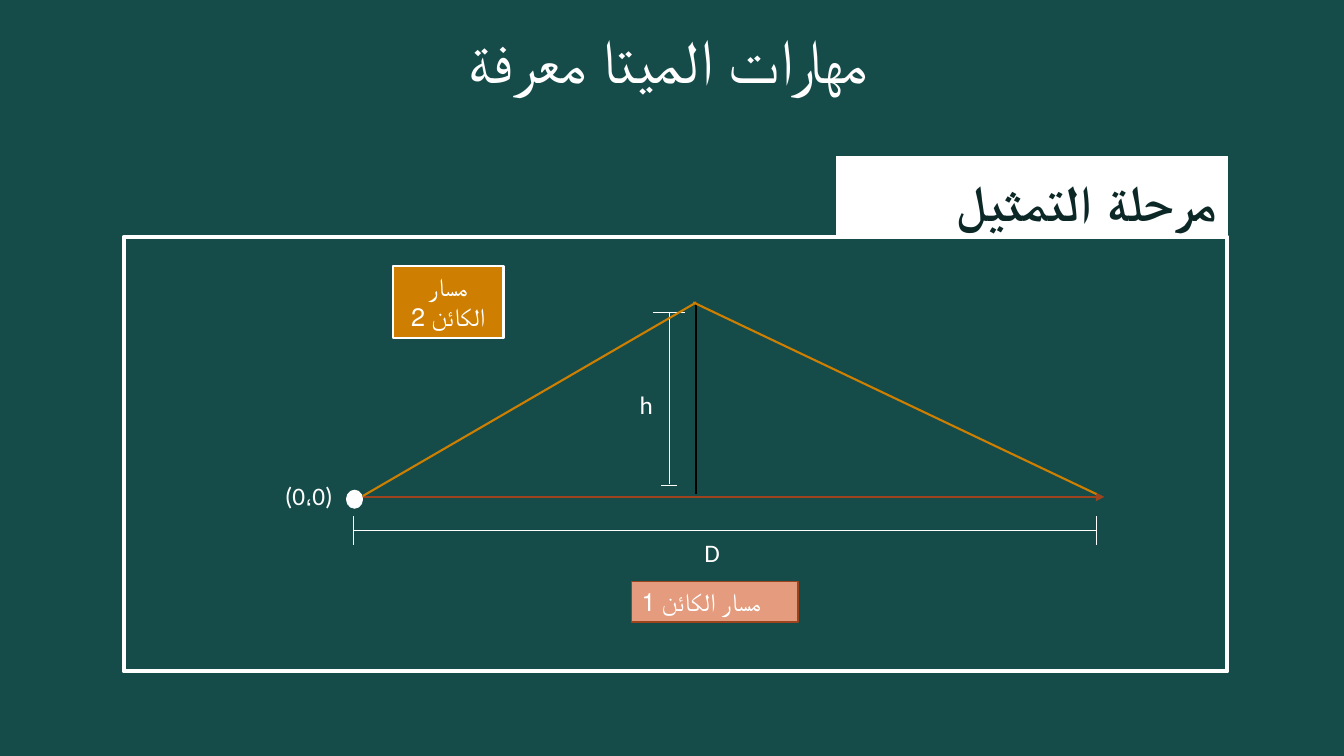
from pptx import Presentation
from pptx.dml.color import RGBColor
from pptx.enum.shapes import MSO_CONNECTOR as Link, MSO_SHAPE as Form
from pptx.enum.text import MSO_ANCHOR as Anchor, MSO_AUTO_SIZE as Fit, PP_ALIGN as Align
from pptx.util import Cm, Pt
from lxml import etree

NS = "http://schemas.openxmlformats.org/drawingml/2006/main"
BACK, DARK, WHITE, BLACK = "154C4A", "0B2827", "FFFFFF", "000000"
GOLD, RUST, PEACH = "CE7F01", "9D441F", "E59B7D"
PLAIN = {"name": "Calibri", "size": Pt(18), "bold": False}


def hue(code):
    return RGBColor.from_string(code)


def paint(fill, code):
    fill.solid()
    fill.fore_color.rgb = hue(code)


def write(shape, text, align=Align.LEFT, color=WHITE, frame=None, rtl=False, **font):
    """Put one formatted paragraph in the shape."""
    body = shape.text_frame
    for key, value in {"word_wrap": True, "vertical_anchor": Anchor.TOP, **(frame or {})}.items():
        setattr(body, key, value)
    para = body.paragraphs[0]
    para.alignment = align
    if rtl:
        para._p.get_or_add_pPr().set("rtl", "1")
    run = para.add_run()
    run.text = text
    for key, value in {**PLAIN, **font}.items():
        setattr(run.font, key, value)
    run.font.color.rgb = hue(color)
    return para


def block(slide, box, fill=None, edge=WHITE, width=0.5, form=Form.RECTANGLE):
    shape = slide.shapes.add_shape(form, *map(Cm, box))
    shape.shadow.inherit = False
    if fill:
        paint(shape.fill, fill)
    else:
        shape.fill.background()
    shape.line.color.rgb = hue(edge)
    shape.line.width = Pt(width)
    return shape


def title(slide, box):
    holder = slide.shapes.title
    for key, value in zip(("left", "top", "width", "height"), box):
        setattr(holder, key, Cm(value))
    sides = ("left", "top", "right", "bottom")
    frame = {f"margin_{side}": 0 for side in sides} | {"auto_size": Fit.NONE}
    para = write(holder, "مهارات الميتا معرفة", Align.CENTER, frame=frame, rtl=True, size=Pt(44))
    para.line_spacing = 0.88


def panel(slide, box):
    """Draw the frame with its heading tab on the top right corner."""
    left, top, width, _ = box
    wide, high = 9.86, 2.03
    tab = block(slide, (left + width - wide, top - high, wide, high), WHITE, width=0.75)
    para = write(tab, "مرحلة التمثيل", Align.RIGHT, DARK, {"vertical_anchor": Anchor.BOTTOM},
                 rtl=True, size=Pt(36), bold=True)
    para.runs[0]._r.get_or_add_rPr().set("spc", "50")
    block(slide, box, width=3)


def paths(slide, box):
    """Draw both object paths with their dimensions and labels."""
    left, top = box[:2]
    start, end, base, peak, apex = 5.79, 24.51, 6.48, 1.65, 14.43
    span, rise = 7.39, 13.74

    def line(x1, y1, x2, y2, color=WHITE, width=0.5):
        link = slide.shapes.add_connector(
            Link.STRAIGHT, Cm(left + x1), Cm(top + y1), Cm(left + x2), Cm(top + y2))
        link.line.color.rgb = hue(color)
        link.line.width = Pt(width)
        etree.SubElement(link._element.spPr, f"{{{NS}}}effectLst")
        return link

    def place(x, y, wide, high):
        return left + x, top + y, wide, high

    axis = line(start, 6.55, 24.71, 6.55, RUST, 1.5)
    etree.SubElement(axis.line._get_or_add_ln(), f"{{{NS}}}tailEnd", type="triangle")
    block(slide, place(5.61, 6.38, 0.41, 0.46), WHITE, form=Form.OVAL)

    line(end, span, start, span)
    for x in (end, start):
        line(x, 7.04, x, 7.77)
    line(apex, base, apex, peak, BLACK, 1.5)
    line(rise, 1.91, rise, 6.22)
    for y, half in ((1.91, 0.4), (6.27, 0.2)):
        line(rise - half, y, rise + half, y)

    line(6.02, 6.53, apex, peak, GOLD, 1.5)
    line(14.35, peak, end, base, GOLD, 1.5)

    for text, x, y, wide in (("(0،0)", 3.81, 6.02, 2.21), ("D", 14.38, 7.44, 3.58),
                             ("h", 12.75, 3.71, 0.97)):
        note = slide.shapes.add_textbox(*map(Cm, place(x, y, wide, 1.02)))
        write(note, text, frame={"auto_size": Fit.SHAPE_TO_FIT_TEXT})

    for text, spot, fill, edge, width, align in (
            ("مسار الكائن 2", (6.78, 0.74, 2.79, 1.8), GOLD, WHITE, 1.5, Align.CENTER),
            ("مسار الكائن 1", (12.8, 8.69, 4.19, 1.02), PEACH, RUST, 1, Align.LEFT)):
        tag = block(slide, place(*spot), fill, edge, width)
        write(tag, text, align, frame={"auto_size": Fit.SHAPE_TO_FIT_TEXT})


def main():
    deck = Presentation()
    deck.slide_width, deck.slide_height = Cm(33.87), Cm(19.05)
    slide = deck.slides.add_slide(deck.slide_layouts[5])
    paint(slide.background.fill, BACK)
    box = (3.12, 5.97, 27.81, 10.95)
    title(slide, (1.6, 0.79, 30.48, 2.84))
    panel(slide, box)
    paths(slide, box)
    deck.save("out.pptx")


if __name__ == "__main__":
    main()
